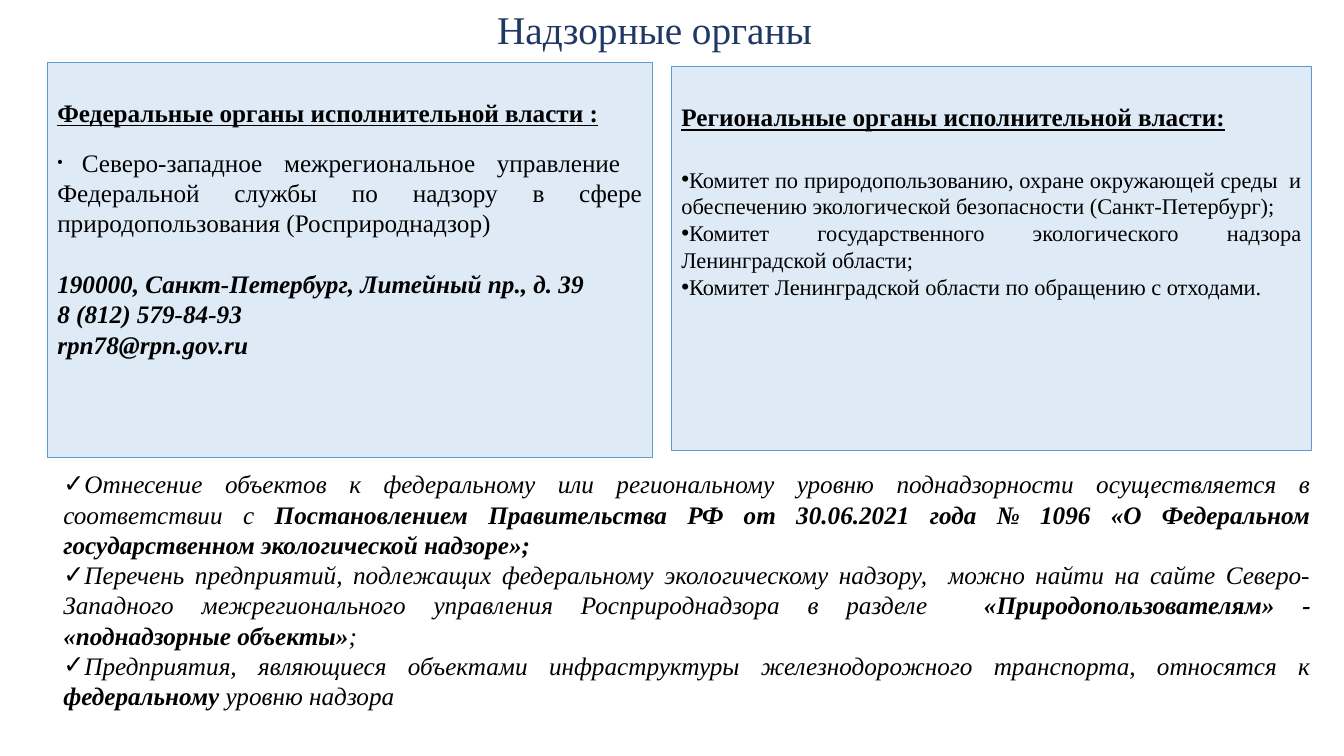
from pptx import Presentation
from pptx.dml.color import RGBColor
from pptx.enum.shapes import MSO_SHAPE as Shape
from pptx.enum.text import MSO_ANCHOR as Anchor, PP_ALIGN as Align
from pptx.oxml.ns import qn
from pptx.util import Inches, Pt
from lxml.etree import SubElement

BLACK = RGBColor(0, 0, 0)
NAVY = RGBColor(0x20, 0x38, 0x64)
PALE = RGBColor(0xDE, 0xEB, 0xF7)
BLUE = RGBColor(0x5B, 0x9B, 0xD5)
FACE = "Times New Roman"

FEDERAL = ("Северо-западное межрегиональное управление  Федеральной службы "
           "по надзору в сфере природопользования (Росприроднадзор)")
CONTACTS = ["190000, Санкт-Петербург, Литейный пр., д. 39",
            "8 (812) 579-84-93", "rpn78@rpn.gov.ru"]
REGIONAL = [
    "Комитет по природопользованию, охране окружающей среды  и обеспечению "
    "экологической безопасности (Санкт-Петербург);",
    "Комитет государственного экологического надзора Ленинградской области;",
    "Комитет Ленинградской области по обращению с отходами.",
]
# Every second piece of a note is bold
NOTES = [
    ["Отнесение объектов к федеральному или региональному уровню "
     "поднадзорности осуществляется в соответствии с ",
     "Постановлением Правительства РФ от 30.06.2021 года № 1096 "
     "«О Федеральном государственном экологической надзоре»;"],
    ["Перечень предприятий, подлежащих федеральному экологическому надзору,  "
     "можно найти на сайте Северо-Западного межрегионального управления "
     "Росприроднадзора в разделе  ",
     "«Природопользователям» - «поднадзорные объекты»", ";"],
    ["Предприятия, являющиеся объектами инфраструктуры железнодорожного "
     "транспорта, относятся к ", "федеральному", " уровню надзора"],
]


def add_para(frame, text="", size=18, align=Align.JUSTIFY, mark=None, gap=0,
             color=BLACK, bold=False, italic=False, under=False):
    """Fill the empty first paragraph, or append one after a gap in points."""
    first = frame.paragraphs[0]
    para = frame.add_paragraph() if first.runs else first
    para.alignment = align
    if gap:
        para.space_before = Pt(gap)
    if mark:
        props = para._p.get_or_add_pPr()
        props.set("marL", "0")
        props.set("indent", "0")
        SubElement(props, qn("a:buFont"), typeface="Arial")
        SubElement(props, qn("a:buChar"), char=mark)
    font = para.font
    font.name, font.size, font.color.rgb = FACE, Pt(size), color
    font.bold, font.italic, font.underline = bold, italic, under
    if text:
        para.add_run().text = text
    return para


def add_panel(slide, box, head):
    panel = slide.shapes.add_shape(Shape.RECTANGLE, *map(Inches, box))
    panel.shadow.inherit = False
    panel.fill.solid()
    panel.fill.fore_color.rgb = PALE
    panel.line.color.rgb = BLUE
    panel.line.width = Pt(0.75)
    frame = panel.text_frame
    frame.word_wrap = True
    frame.vertical_anchor = Anchor.TOP
    frame.margin_top = Inches(0.35)
    add_para(frame, head, align=Align.LEFT, bold=True, under=True)
    return frame


def add_federal(slide, box):
    frame = add_panel(slide, box, "Федеральные органы исполнительной власти :")
    para = add_para(frame, mark="•", gap=13.5)
    lead = para.add_run()
    lead.text = " "
    lead.font.size = Pt(11)
    para.add_run().text = FEDERAL
    for i, line in enumerate(CONTACTS):
        add_para(frame, line, gap=0 if i else 22, bold=True, italic=True)


def add_regional(slide, box):
    frame = add_panel(slide, box, "Региональные органы исполнительной власти:")
    for i, line in enumerate(REGIONAL):
        add_para(frame, line, size=16, mark="•", gap=0 if i else 24)


def add_text(slide, box):
    frame = slide.shapes.add_textbox(*map(Inches, box)).text_frame
    frame.word_wrap = True
    return frame


def add_title(slide, box):
    add_para(add_text(slide, box), "Надзорные органы ", size=28,
             align=Align.CENTER, color=NAVY)


def add_notes(slide, box):
    frame = add_text(slide, box)
    for note in NOTES:
        para = add_para(frame, mark="✓", italic=True)
        for i, piece in enumerate(note):
            run = para.add_run()
            run.text = piece
            if i % 2:
                run.font.bold = True


def main():
    deck = Presentation()
    deck.slide_width, deck.slide_height = Inches(13.33), Inches(7.5)
    slide = deck.slides.add_slide(deck.slide_layouts[6])
    add_federal(slide, (0.47, 0.62, 6, 3.92))
    add_title(slide, (1.15, 0, 10.78, 0.57))
    add_regional(slide, (6.66, 0.66, 6.35, 3.81))
    add_notes(slide, (0.53, 4.6, 12.57, 2.52))
    deck.save("out.pptx")


if __name__ == "__main__":
    main()
